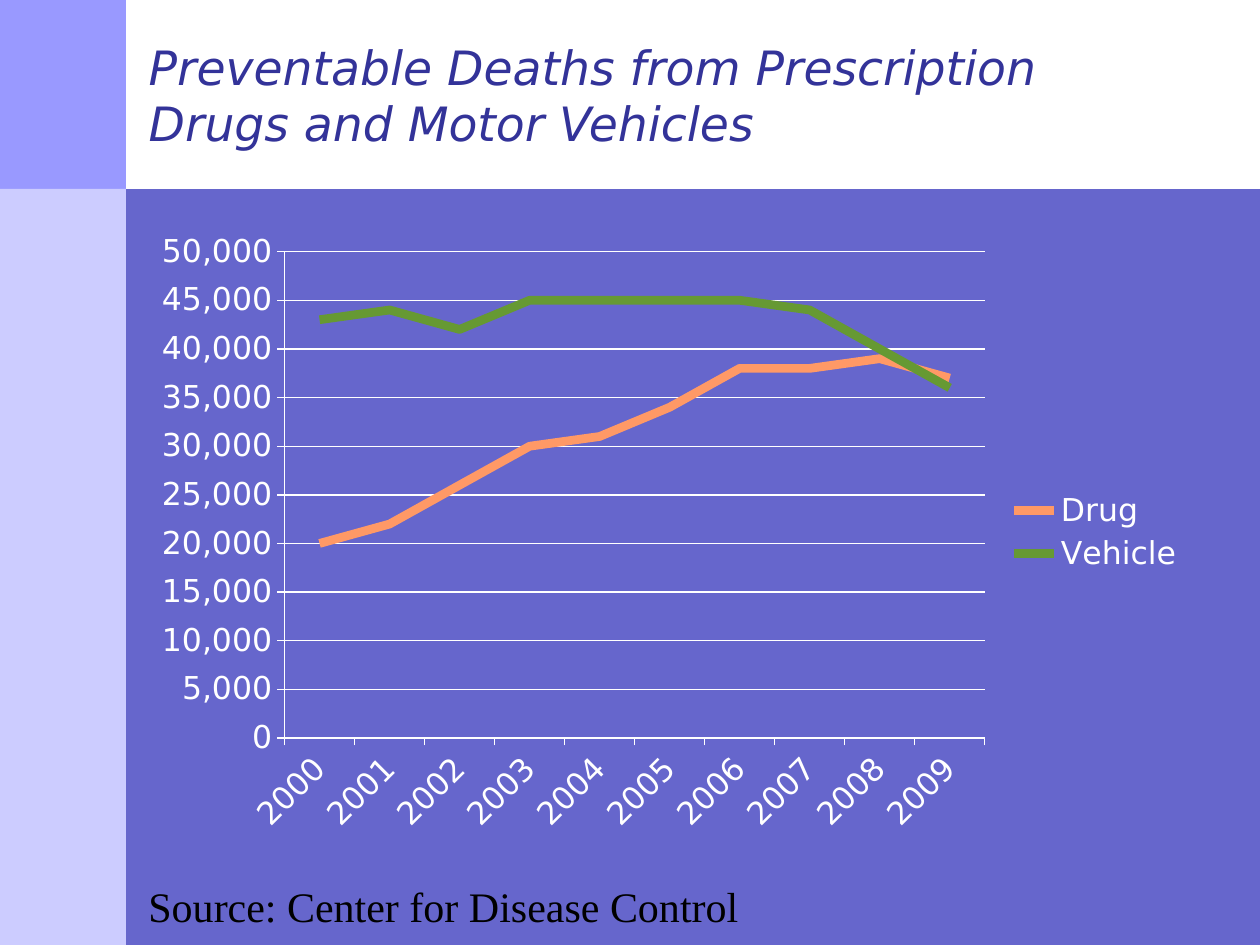
"""Build a slide charting preventable deaths from drugs and motor vehicles."""
import pptx
import pptx.chart.data
import pptx.dml.color
import pptx.enum.chart
import pptx.enum.text
import pptx.oxml
import pptx.oxml.ns
import pptx.util

Inches, Pt = pptx.util.Inches, pptx.util.Pt
RGBColor = pptx.dml.color.RGBColor

WHITE = RGBColor(0xFF, 0xFF, 0xFF)
BLACK = RGBColor(0x00, 0x00, 0x00)
NAVY = RGBColor(0x33, 0x33, 0x99)
INDIGO = RGBColor(0x66, 0x66, 0xCC)
PERIWINKLE = RGBColor(0x99, 0x99, 0xFF)
LAVENDER = RGBColor(0xCC, 0xCC, 0xFF)
ORANGE = RGBColor(0xFF, 0x99, 0x66)
GREEN = RGBColor(0x66, 0x99, 0x33)

TITLE = "Preventable Deaths from Prescription Drugs and Motor Vehicles"
SOURCE = "Source: Center for Disease Control"
YEARS = [str(year) for year in range(2000, 2010)]
DEATHS = [
    ("Drug", ORANGE, [20000, 22000, 26000, 30000, 31000, 34000, 38000, 38000, 39000, 37000]),
    ("Vehicle", GREEN, [43000, 44000, 42000, 45000, 45000, 45000, 45000, 44000, 40000, 36000]),
]

WIDTH, HEIGHT, BAND, SIDEBAR, LEFT = 10, 7.5, 1.5, 1, 1.08
PANELS = [
    (WHITE, (0, 0, WIDTH, BAND)),
    (PERIWINKLE, (0, 0, SIDEBAR, BAND)),
    (LAVENDER, (0, BAND, SIDEBAR, HEIGHT - BAND)),
]
TITLE_BOX = (LEFT, 0.25, 8.25, 1)
CHART_BOX = (LEFT, 1.75, 8.42, 4.95)
SOURCE_BOX = (LEFT, 6.94, 4.93, 0.5)
PLOT_BOX = (2.22, 1.99, 5.58, 3.85)

TITLE_FONT = {"name": "DejaVu Sans", "size": Pt(27), "italic": True, "bold": False}
CHART_FONT = {"name": "DejaVu Sans", "size": Pt(18), "bold": False}
SOURCE_FONT = {"name": "Times New Roman", "size": Pt(24)}


def inches(box):
    return [Inches(length) for length in box]


def format_font(font, values, color):
    for attribute, value in values.items():
        setattr(font, attribute, value)
    font.color.rgb = color


def add_panels(slide):
    for color, box in PANELS:
        panel = slide.shapes.add_shape(pptx.enum.shapes.MSO_SHAPE.RECTANGLE, *inches(box))
        panel.shadow.inherit = False
        panel.fill.solid()
        panel.fill.fore_color.rgb = color
        panel.line.fill.background()


def place_title(slide):
    title = slide.shapes.title
    slide.shapes._spTree.append(title._element)
    title.left, title.top, title.width, title.height = inches(TITLE_BOX)
    frame = title.text_frame
    frame.text = TITLE
    frame.word_wrap = True
    frame.auto_size = pptx.enum.text.MSO_AUTO_SIZE.NONE
    frame.vertical_anchor = pptx.enum.text.MSO_ANCHOR.MIDDLE
    frame.paragraphs[0].alignment = pptx.enum.text.PP_ALIGN.LEFT
    format_font(frame.paragraphs[0].runs[0].font, TITLE_FONT, NAVY)


def fix_plot_area(chart):
    left, top, width, height = CHART_BOX
    x, y, w, h = PLOT_BOX
    shares = {"x": (x - left) / width, "y": (y - top) / height, "w": w / width, "h": h / height}
    sizes = "".join(f'<c:{key} val="{share:.2f}"/>' for key, share in shares.items())
    layout = pptx.oxml.parse_xml(
        f'<c:layout {pptx.oxml.ns.nsdecls("c")}><c:manualLayout><c:layoutTarget val="inner"/>'
        f'<c:xMode val="edge"/><c:yMode val="edge"/>{sizes}</c:manualLayout></c:layout>')
    plot_area = chart._chartSpace.chart.plotArea
    for automatic in plot_area.findall(pptx.oxml.ns.qn("c:layout")):
        plot_area.remove(automatic)
    plot_area.insert(0, layout)


def add_deaths_chart(slide):
    data = pptx.chart.data.CategoryChartData(number_format="#,##0")
    data.categories = YEARS
    for name, _, deaths in DEATHS:
        data.add_series(name, deaths)
    chart = slide.shapes.add_chart(
        pptx.enum.chart.XL_CHART_TYPE.LINE, *inches(CHART_BOX), data).chart
    format_font(chart.font, CHART_FONT, WHITE)
    chart.has_title = False
    chart.has_legend = True
    chart.legend.position = pptx.enum.chart.XL_LEGEND_POSITION.RIGHT
    chart.legend.include_in_layout = False
    chart.plots[0].vary_by_categories = False

    for series, (_, color, _) in zip(chart.plots[0].series, DEATHS):
        series.smooth = False
        series.marker.style = pptx.enum.chart.XL_MARKER_STYLE.NONE
        series.format.line.color.rgb = color
        series.format.line.width = Pt(5)

    years, counts = chart.category_axis, chart.value_axis
    counts.minimum_scale, counts.maximum_scale, counts.major_unit = 0, 50000, 5000
    counts.has_major_gridlines = True
    counts.tick_labels.number_format = "#,##0"
    counts.tick_labels.number_format_is_linked = False
    for axis in (years, counts):
        axis.major_tick_mark = pptx.enum.chart.XL_TICK_MARK.OUTSIDE
        format_font(axis.tick_labels.font, CHART_FONT, WHITE)
    for line in (years.format.line, counts.format.line, counts.major_gridlines.format.line):
        line.color.rgb = WHITE
        line.width = Pt(0.75)
    slant = years._element.find(".//" + pptx.oxml.ns.qn("a:bodyPr"))
    slant.set("rot", str(-45 * 60000))
    slant.set("vert", "horz")
    fix_plot_area(chart)


def add_source(slide):
    frame = slide.shapes.add_textbox(*inches(SOURCE_BOX)).text_frame
    frame.text = SOURCE
    frame.word_wrap = False
    frame.auto_size = pptx.enum.text.MSO_AUTO_SIZE.SHAPE_TO_FIT_TEXT
    format_font(frame.paragraphs[0].runs[0].font, SOURCE_FONT, BLACK)


def main():
    deck = pptx.Presentation()
    deck.slide_width, deck.slide_height = Inches(WIDTH), Inches(HEIGHT)
    slide = deck.slides.add_slide(deck.slide_layouts.get_by_name("Title Only"))
    slide.background.fill.solid()
    slide.background.fill.fore_color.rgb = INDIGO
    add_panels(slide)
    place_title(slide)
    add_deaths_chart(slide)
    add_source(slide)
    deck.save("out.pptx")


if __name__ == "__main__":
    main()
